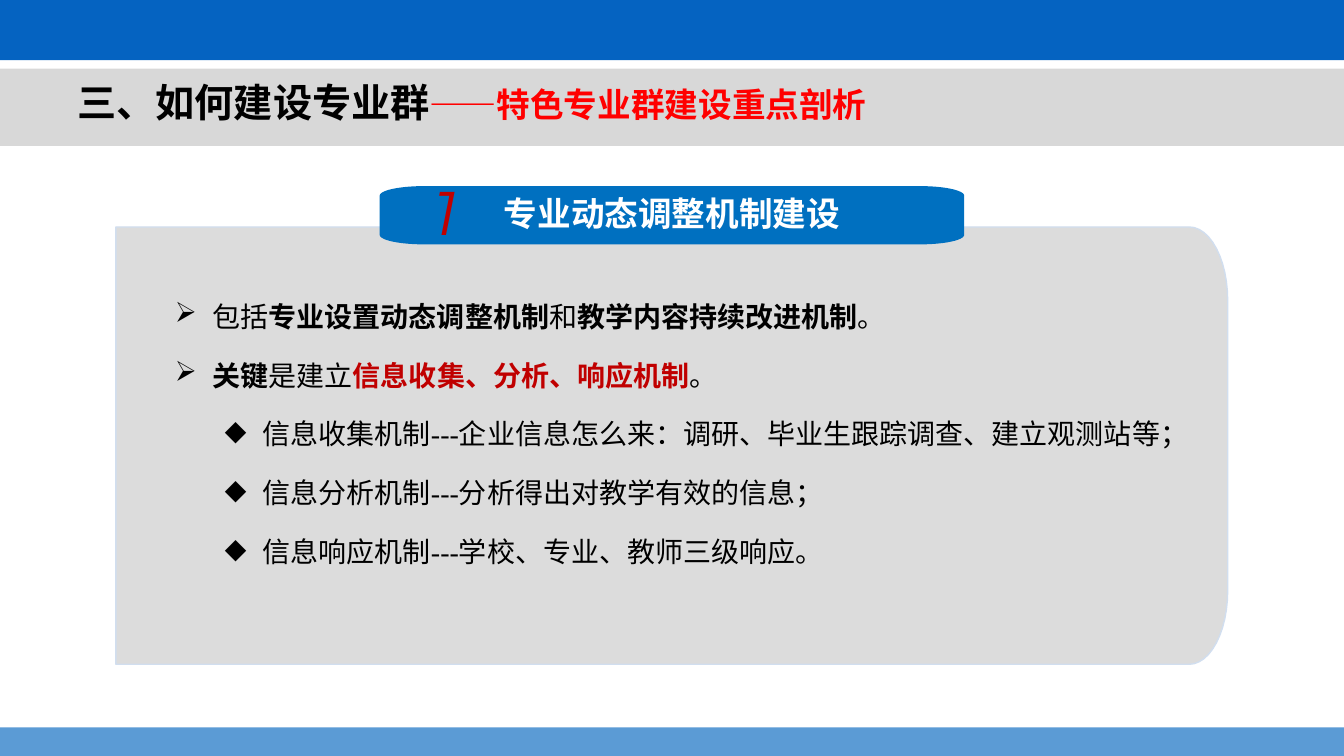
import math
import pptx
import pptx.dml.color
import pptx.enum.shapes
import pptx.enum.text
import pptx.oxml
import pptx.oxml.ns
import pptx.util
from dataclasses import dataclass

Cm = pptx.util.Cm
Pt = pptx.util.Pt
RGB = pptx.dml.color.RGBColor.from_string
ALIGN = pptx.enum.text.PP_ALIGN
ANCHOR = pptx.enum.text.MSO_ANCHOR


@dataclass(frozen=True)
class Theme:
    top_bar: str = "0563C1"
    bottom_bar: str = "5B9BD5"
    title_band: str = "D8D8D8"
    panel: str = "DCDCDC"
    panel_line: str = "D1DEEF"
    banner: str = "0070C0"
    black: str = "000000"
    white: str = "FFFFFF"
    red: str = "FF0000"
    dark_red: str = "C00000"
    cjk: str = "Noto Sans CJK SC"
    digits: str = "Montserrat"
    title: int = 28
    heading: int = 24
    body: int = 20
    number: int = 44


theme = Theme()


def add_run(p, text, *, size=theme.body, color=theme.black, bold=False,
            italic=False, font=theme.cjk, latin=None):
    r = p.add_run()
    r.text = text
    r.font.size, r.font.bold, r.font.italic = Pt(size), bold, italic
    r.font.color.rgb = RGB(color)
    r.font.name = latin or font
    ea = pptx.oxml.parse_xml(f'<a:ea {pptx.oxml.ns.nsdecls("a")} typeface="{font}"/>')
    r.font._element.append(ea)


def add_rounded(left, top, width, height, rx, ry, rounded_left):
    """Freeform box with elliptical corners on the right, and on the left if asked."""
    cx, cy = width / 2, height / 2
    points = []
    for quarter, (sx, sy) in enumerate([(1, 1), (-1, 1), (-1, -1), (1, -1)]):
        if sx < 0 and not rounded_left:
            points.append((left, top + cy + sy * cy))
            continue
        for step in range(13):
            angle = math.radians(90 * quarter + 7.5 * step)
            points.append((left + cx + sx * (cx - rx) + rx * math.cos(angle),
                           top + cy + sy * (cy - ry) + ry * math.sin(angle)))
    points = [(Cm(x), Cm(y)) for x, y in points]
    builder = s.shapes.build_freeform(*points[0])
    builder.add_line_segments(points[1:], close=True)
    return builder.convert_to_shape()


prs = pptx.Presentation()
prs.slide_width, prs.slide_height = Cm(33.87), Cm(19.05)
s = prs.slides.add_slide(prs.slide_layouts[6])

# Full-width bars
for top, height, color in [(1.73, 1.95, theme.title_band),
                           (0, 1.52, theme.top_bar),
                           (18.33, 0.72, theme.bottom_bar)]:
    sp = s.shapes.add_shape(pptx.enum.shapes.MSO_SHAPE.RECTANGLE,
                            0, Cm(top), prs.slide_width, Cm(height))
    sp.shadow.inherit = False
    sp.fill.solid()
    sp.fill.fore_color.rgb = RGB(color)
    sp.line.fill.background()

# Title
tf = s.shapes.add_textbox(Cm(1.7), Cm(1.9), Cm(22.6), Cm(1.5)).text_frame
tf.word_wrap = True
tf.vertical_anchor = ANCHOR.MIDDLE
p = tf.paragraphs[0]
p.line_spacing = 0.9
add_run(p, "三、如何建设专业群", size=theme.title, bold=True)
add_run(p, "——特色专业群建设重点剖析", size=theme.heading, color=theme.red, bold=True)

# Panel with the two-level list
panel = add_rounded(2.92, 5.72, 28.02, 11.02, 0.97, 1.85, rounded_left=False)
panel.shadow.inherit = False
panel.fill.solid()
panel.fill.fore_color.rgb = RGB(theme.panel)
panel.line.color.rgb = RGB(theme.panel_line)
panel.line.width = Pt(1)
tf = panel.text_frame
tf.word_wrap = True
tf.vertical_anchor = ANCHOR.MIDDLE
tf.margin_left, tf.margin_right = Cm(0.2), Cm(0.28)
tf.margin_top, tf.margin_bottom = Cm(0.4), Cm(1.42)

key = {"bold": True}
items = [
    (1, [("包括", {}), ("专业设置动态调整机制", key), ("和", {}),
         ("教学内容持续改进机制", key), ("。", {})]),
    (1, [("关键", key), ("是建立", {}),
         ("信息收集、分析、响应机制", {"bold": True, "color": theme.dark_red}), ("。", {})]),
    (2, [("信息收集机制---企业信息怎么来：调研、毕业生跟踪调查、建立观测站等；", {})]),
    (2, [("信息分析机制---分析得出对教学有效的信息；", {})]),
    (2, [("信息响应机制---学校、专业、教师三级响应。", {})]),
]
bullets = {1: "➢", 2: "◆"}
for i, (level, runs) in enumerate(items):
    p = tf.add_paragraph() if i else tf.paragraphs[0]
    p.level = level
    p.alignment = ALIGN.LEFT
    p.line_spacing = 1.5
    p.space_before = Pt(6 if i else 0)
    pPr = p._p.get_or_add_pPr()
    pPr.set("marL", str(Cm(2.24 if level == 1 else 3.5)))
    pPr.set("indent", str(-Cm(0.95)))
    pPr.append(pptx.oxml.parse_xml(
        f'<a:buChar {pptx.oxml.ns.nsdecls("a")} char="{bullets[level]}"/>'))
    for text, style in runs:
        add_run(p, text, latin="Times New Roman", **style)

# Banner with its number
banner = add_rounded(9.57, 4.69, 14.73, 1.47, 1.12, 0.24, rounded_left=True)
banner.shadow.inherit = False
banner.fill.solid()
banner.fill.fore_color.rgb = RGB(theme.banner)
banner.line.fill.background()
tf = banner.text_frame
tf.vertical_anchor = ANCHOR.MIDDLE
tf.margin_top = tf.margin_bottom = 0
p = tf.paragraphs[0]
p.alignment = ALIGN.CENTER
p.line_spacing = 0.9
add_run(p, "专业动态调整机制建设", size=theme.heading, color=theme.white, bold=True)

tf = s.shapes.add_textbox(Cm(10.69), Cm(4.27), Cm(1.47), Cm(2.13)).text_frame
tf.word_wrap = True
add_run(tf.paragraphs[0], "1", size=theme.number, color=theme.dark_red,
        italic=True, font=theme.digits)

prs.save("out.pptx")
